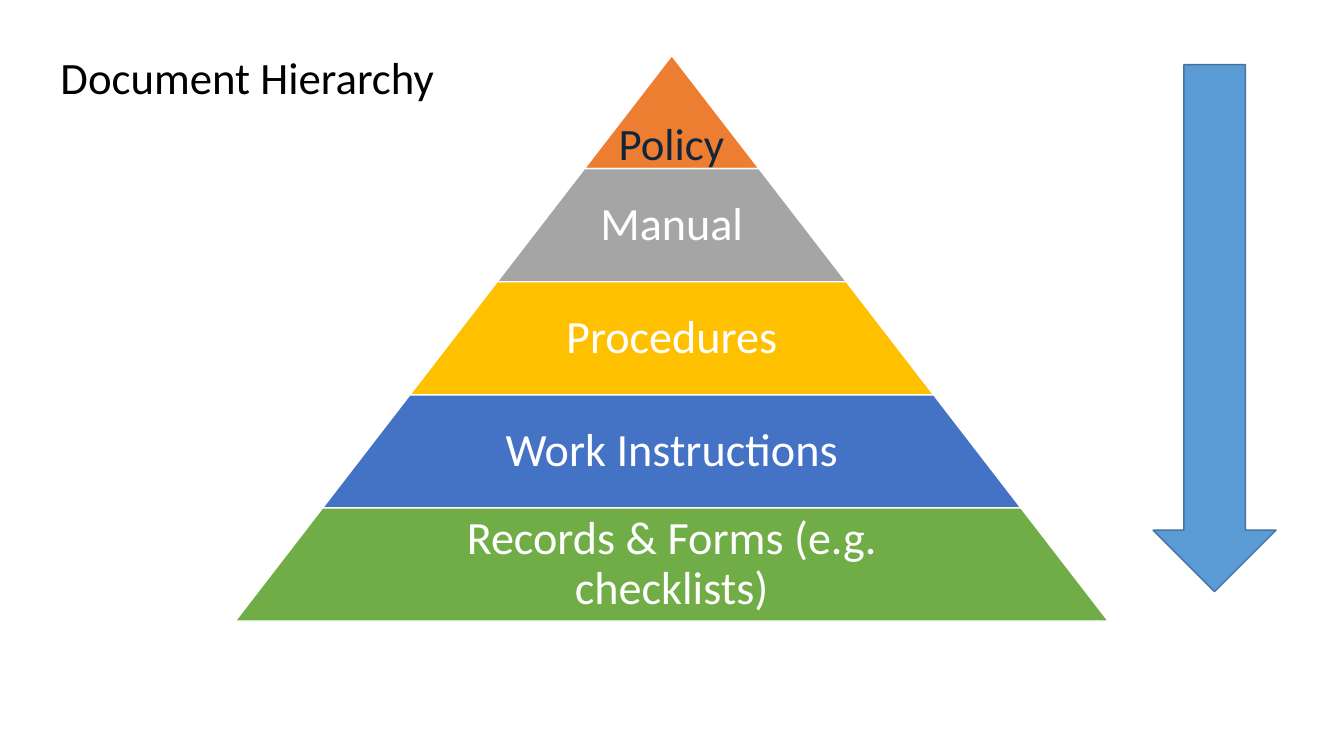
from pptx import Presentation
from pptx.dml.color import RGBColor
from pptx.enum import shapes, text
from pptx.util import Cm, Pt

FONT = "Calibri"
WHITE = RGBColor(0xFF, 0xFF, 0xFF)
BLACK = RGBColor(0x00, 0x00, 0x00)
NAVY = RGBColor(0x13, 0x25, 0x3B)
ORANGE = RGBColor(0xED, 0x7D, 0x31)
GRAY = RGBColor(0xA5, 0xA5, 0xA5)
GOLD = RGBColor(0xFF, 0xC0, 0x00)
BLUE = RGBColor(0x44, 0x72, 0xC4)
GREEN = RGBColor(0x70, 0xAD, 0x47)
SKY = RGBColor(0x5B, 0x9B, 0xD5)
STEEL = RGBColor(0x43, 0x73, 0x9E)

TIERS = [
    ("", ORANGE),
    ("Manual", GRAY),
    ("Procedures", GOLD),
    ("Work Instructions", BLUE),
    ("Records & Forms (e.g. checklists)", GREEN),
]
MID, TOP = 16.93, 1.4  # apex of the pyramid, in cm
STEP, HIGH = 4.4, 2.85  # growth in width and height of each tier, in cm


class Deck:
    def __init__(self):
        self.prs = Presentation()
        self.prs.slide_width = Cm(33.87)
        self.prs.slide_height = Cm(19.05)
        self.slide = self.prs.slides.add_slide(self.prs.slide_layouts[5])

    def style(self, frame, words, size, color, align):
        frame.text = words
        para = frame.paragraphs[0]
        para.alignment = align
        font = para.runs[0].font
        font.name, font.size, font.color.rgb = FONT, Pt(size), color
        return para

    def title(self, words, x, y, w, h):
        box = self.slide.shapes.title
        box.left, box.top, box.width, box.height = Cm(x), Cm(y), Cm(w), Cm(h)
        frame = box.text_frame
        frame.word_wrap = False
        frame.vertical_anchor = text.MSO_ANCHOR.TOP
        self.style(frame, words, 32, BLACK, text.PP_ALIGN.LEFT)

    def shape(self, kind, x, y, w, h, fill, line):
        item = self.slide.shapes.add_shape(kind, Cm(x), Cm(y), Cm(w), Cm(h))
        item.shadow.inherit = False
        item.fill.solid()
        item.fill.fore_color.rgb = fill
        item.line.color.rgb = line
        item.line.width = Pt(1)
        return item

    def label(self, words, x, y, w, h, size, color):
        box = self.slide.shapes.add_textbox(Cm(x), Cm(y), Cm(w), Cm(h))
        frame = box.text_frame
        frame.word_wrap = False
        self.style(frame, words, size, color, text.PP_ALIGN.LEFT)
        return frame

    def tier(self, rank, words, fill):
        """Draw one band of the pyramid, counted from 1 at the apex."""
        wide, y = STEP * rank, TOP + HIGH * (rank - 1)
        band = self.shape(shapes.MSO_SHAPE.TRAPEZOID, MID - wide / 2, y,
                          wide, HIGH, fill, WHITE)
        band.adjustments[0] = STEP / 2 / HIGH
        if not words:
            return
        inner = wide * 0.65
        frame = self.label(words, MID - inner / 2, y, inner, HIGH, 33, WHITE)
        frame.word_wrap = True
        frame.vertical_anchor = text.MSO_ANCHOR.MIDDLE
        frame.margin_left = frame.margin_right = Cm(0.12)
        frame.margin_top = frame.margin_bottom = Cm(0.12)
        para = frame.paragraphs[0]
        para.alignment = text.PP_ALIGN.CENTER
        para.line_spacing = 0.9


def main():
    deck = Deck()
    deck.title("Document Hierarchy", 1.27, 1.12, 10.03, 1.63)
    for rank, (words, fill) in enumerate(TIERS, 1):
        deck.tier(rank, words, fill)
    deck.shape(shapes.MSO_SHAPE.DOWN_ARROW, 29.06, 1.63, 3.1, 13.28, SKY, STEEL)
    deck.label("Policy", 15.34, 2.79, 3.2, 2.39, 32, NAVY)
    deck.prs.save("out.pptx")


if __name__ == "__main__":
    main()
